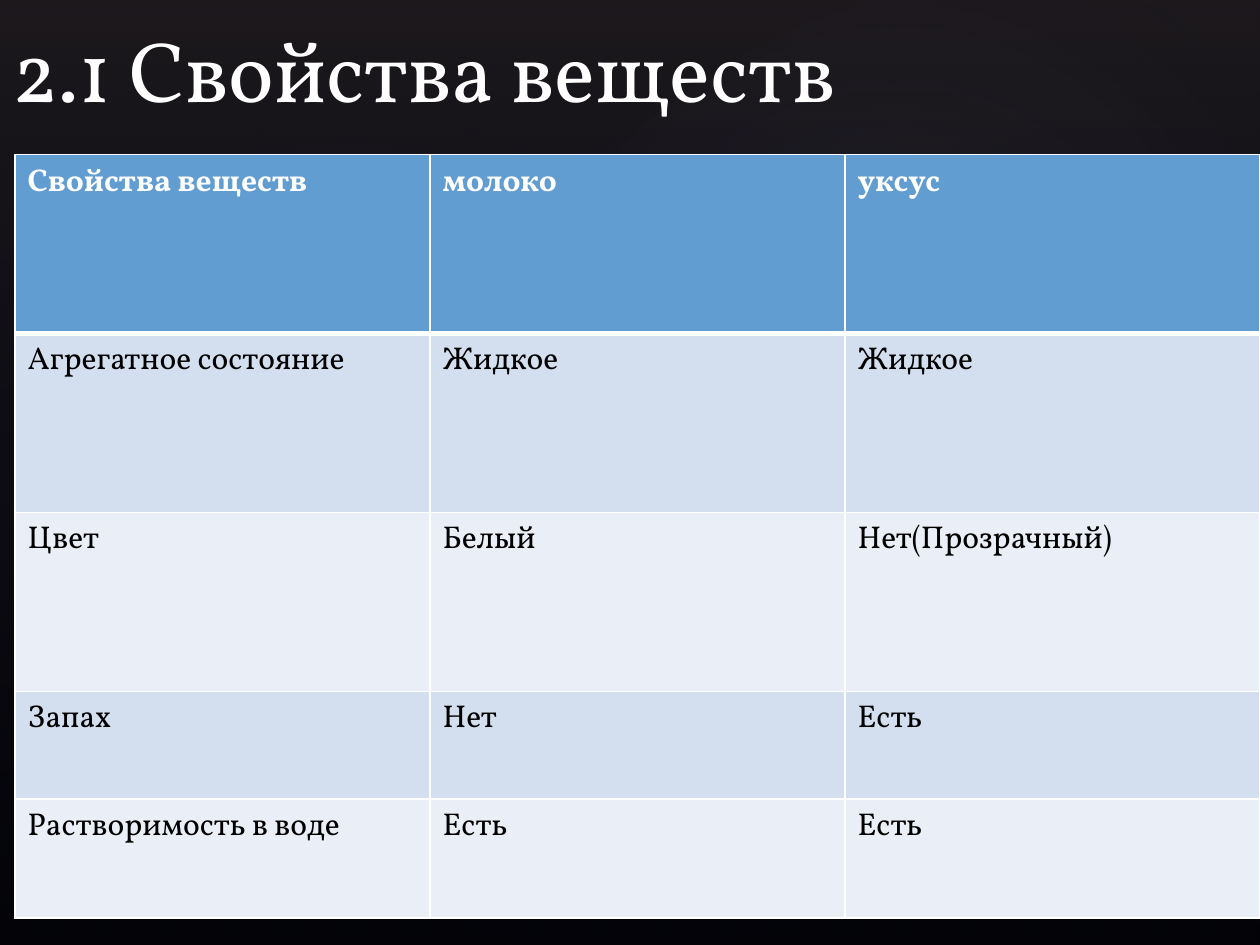
from lxml.etree import SubElement
from pptx import Presentation
from pptx.dml.color import RGBColor
from pptx.enum.shapes import MSO_SHAPE as Shape
from pptx.enum.text import MSO_ANCHOR as Anchor
from pptx.oxml.ns import qn
from pptx.util import Pt

BLACK = RGBColor(0x00, 0x00, 0x00)
WHITE = RGBColor(0xFF, 0xFF, 0xFF)
PLUM = RGBColor(0x50, 0x46, 0x52)
NAVY = RGBColor(0x24, 0x28, 0x52)
MIST = RGBColor(0xC4, 0xBC, 0xC6)
HEADER_BLUE = RGBColor(0x62, 0x9D, 0xD1)
BAND_DARK = RGBColor(0xD3, 0xDF, 0xEE)
BAND_LIGHT = RGBColor(0xEA, 0xEF, 0xF7)
FONT = "Vollkorn"

WIDTH, HEIGHT = 720, 540
GLOWS = [
    ((108, 82.08, 570.24, 449.28), 328.7, 7),
    ((-21.6, 92.16, 436.32, 352.8), 294.3, 8),
    ((257.76, 9.36, 510.48, 374.4), 328.7, 8),
]
PROPERTIES = [
    ("Свойства веществ", "молоко", "уксус"),
    ("Агрегатное состояние", "Жидкое", "Жидкое"),
    ("Цвет", "Белый", "Нет(Прозрачный)"),
    ("Запах", "Нет", "Есть"),
    ("Растворимость в воде", "Есть", "Есть"),
]
ROW_HEIGHTS = [102.24, 102.24, 102.24, 61.5, 68]


def add_color(parent, color, alpha=100):
    node = SubElement(parent, qn("a:srgbClr"), val=str(color))
    if alpha < 100:
        SubElement(node, qn("a:alpha"), val=str(alpha * 1000))


def add_gradient_shape(slide, kind, box, stops, radial=False):
    shape = slide.shapes.add_shape(kind, *map(Pt, box))
    shape.shadow.inherit = False
    shape.line.fill.background()
    shape.fill.gradient()
    gradient = shape._element.spPr.find(qn("a:gradFill"))
    for child in list(gradient):
        gradient.remove(child)
    stop_list = SubElement(gradient, qn("a:gsLst"))
    for position, color, alpha in stops:
        stop = SubElement(stop_list, qn("a:gs"), pos=str(position * 1000))
        add_color(stop, color, alpha)
    if radial:
        center = SubElement(gradient, qn("a:path"), path="circle")
        SubElement(center, qn("a:fillToRect"), l="50000", t="50000", r="50000", b="50000")
    else:
        SubElement(gradient, qn("a:lin"), ang="5400000", scaled="0")
    return shape


def add_backdrop(slide, box):
    left, top = box[:2]
    slide.background.fill.solid()
    slide.background.fill.fore_color.rgb = BLACK
    add_gradient_shape(slide, Shape.RECTANGLE, box, [(0, PLUM, 36), (100, NAVY, 10)])
    for (x, y, width, height), angle, alpha in GLOWS:
        glow = add_gradient_shape(slide, Shape.OVAL, (left + x, top + y, width, height),
                                  [(0, MIST, alpha), (58, NAVY, 0)], radial=True)
        glow.rotation = angle


def style_text(frame, size, color, bold=False):
    font = frame.paragraphs[0].runs[0].font
    font.name, font.size, font.bold = FONT, Pt(size), bold
    font.color.rgb = color


def add_title(slide, box):
    frame = slide.shapes.add_textbox(*map(Pt, box)).text_frame
    frame.word_wrap = True
    frame.vertical_anchor = Anchor.BOTTOM
    frame.text = "2.1 Свойства веществ"
    style_text(frame, 49, WHITE)


def add_cell_borders(cell, widths):
    properties = cell._tc.get_or_add_tcPr()
    for index, (side, width) in enumerate(widths.items()):
        border = properties.makeelement(qn(f"a:{side}"), {"w": str(Pt(width))})
        add_color(SubElement(border, qn("a:solidFill")), WHITE)
        properties.insert(index, border)


def add_properties_table(slide, box):
    column_count = len(PROPERTIES[0])
    table = slide.shapes.add_table(len(PROPERTIES), column_count, *map(Pt, box)).table
    for column in table.columns:
        column.width = Pt(box[2] / column_count)
    for r, (values, height) in enumerate(zip(PROPERTIES, ROW_HEIGHTS)):
        table.rows[r].height = Pt(height)
        header = r == 0
        band = HEADER_BLUE if header else (BAND_LIGHT, BAND_DARK)[r % 2]
        for c, value in enumerate(values):
            cell = table.cell(r, c)
            cell.text_frame.text = value
            style_text(cell.text_frame, 18, WHITE if header else BLACK, header)
            cell.fill.solid()
            cell.fill.fore_color.rgb = band
            add_cell_borders(cell, {"lnL": 1, "lnR": 1, "lnT": 3 if r == 1 else 1,
                                    "lnB": 3 if header else 1})


def main():
    deck = Presentation()
    deck.slide_width, deck.slide_height = Pt(WIDTH), Pt(HEIGHT)
    slide = deck.slides.add_slide(deck.slide_layouts[6])
    add_backdrop(slide, (0, 0, WIDTH, HEIGHT))
    add_title(slide, (0, 0, 594, 72))
    add_properties_table(slide, (8.6, 88.4, 711.4, sum(ROW_HEIGHTS)))
    deck.save("out.pptx")


if __name__ == "__main__":
    main()
